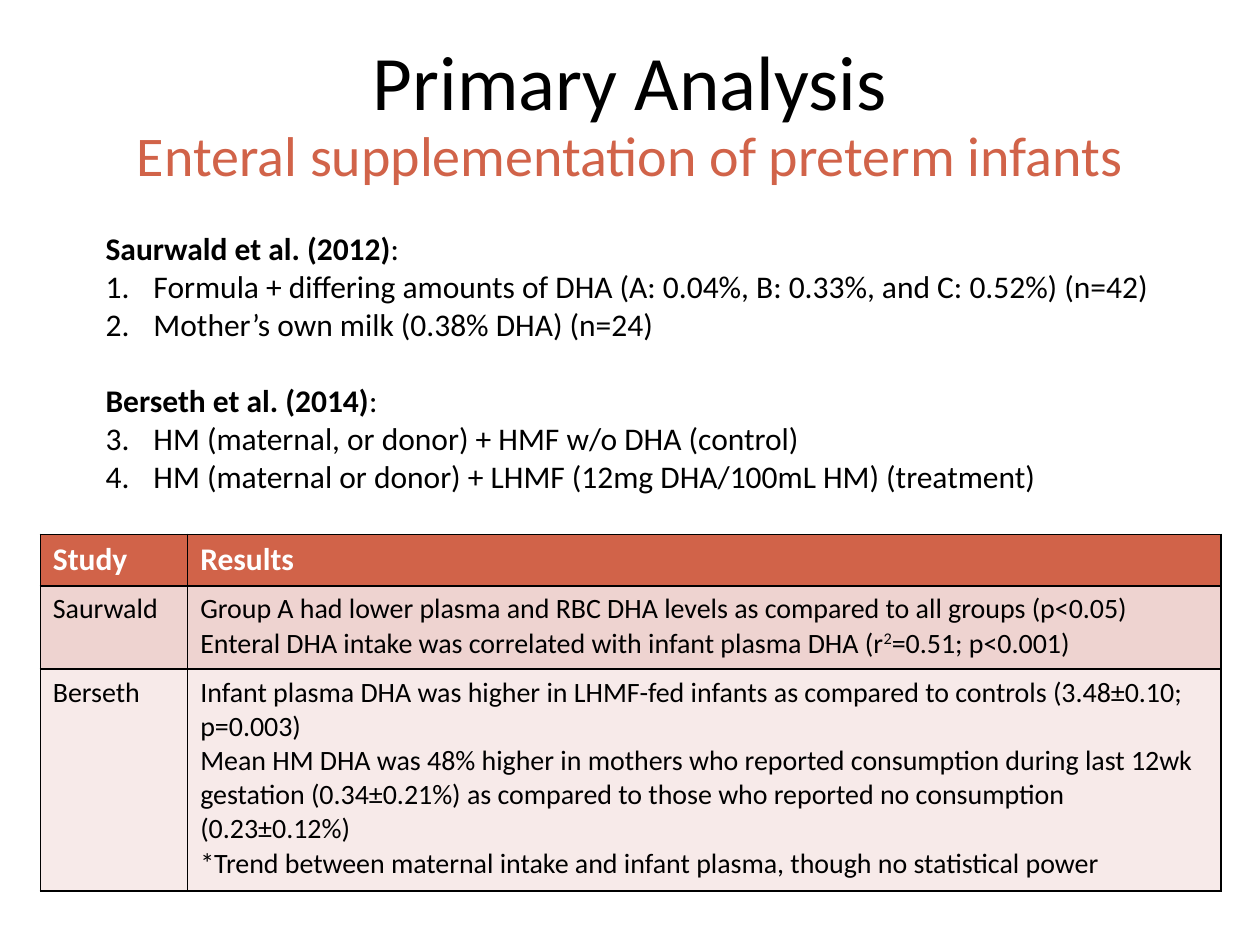
from lxml import etree
from pptx import Presentation
from pptx.dml.color import RGBColor
from pptx.enum.text import MSO_ANCHOR, MSO_AUTO_SIZE, PP_ALIGN
from pptx.oxml.ns import qn
from pptx.util import Inches, Pt

CENTER = PP_ALIGN.CENTER
MIDDLE = MSO_ANCHOR.MIDDLE
NO_AUTOFIT = MSO_AUTO_SIZE.NONE
GROW = MSO_AUTO_SIZE.SHAPE_TO_FIT_TEXT

FONT = "Calibri"
BLACK, WHITE, ACCENT = "000000", "FFFFFF", "D16349"
ROW_FILLS = [ACCENT, "EED3D0", "F7EAE9"]
COLUMN_WIDTHS = [1.17, 8.2]
ROW_HEIGHTS = [0.41, 0.66, 1.76]
LINE_HEIGHT = Pt(22)

STUDIES = [
    ("Saurwald et al. (2012)", [
        "Formula + differing amounts of DHA (A: 0.04%, B: 0.33%, and C: 0.52%) (n=42)",
        "Mother’s own milk (0.38% DHA) (n=24)",
    ]),
    ("Berseth et al. (2014)", [
        "HM (maternal, or donor) + HMF w/o DHA (control)",
        "HM (maternal or donor) + LHMF (12mg DHA/100mL HM) (treatment)",
    ]),
]

# Each cell is a list of paragraphs; a caret pair encloses superscript text.
RESULTS = [
    (["Study"], ["Results"]),
    (["Saurwald"], [
        "Group A had lower plasma and RBC DHA levels as compared to all groups (p<0.05)",
        "Enteral DHA intake was correlated with infant plasma DHA (r^2^=0.51; p<0.001)",
    ]),
    (["Berseth"], [
        "Infant plasma DHA was higher in LHMF-fed infants as compared to controls "
        "(3.48±0.10; p=0.003)",
        "Mean HM DHA was 48% higher in mothers who reported consumption during last 12wk "
        "gestation (0.34±0.21%) as compared to those who reported no consumption (0.23±0.12%)",
        "*Trend between maternal intake and infant plasma, though no statistical power",
    ]),
]


def color(value):
    return RGBColor.from_string(value)


def place(shape, box):
    for name, value in zip(("left", "top", "width", "height"), box):
        setattr(shape, name, Inches(value))


def add_run(paragraph, text, size, fill=BLACK, bold=False):
    run = paragraph.add_run()
    run.text = text
    for name, value in {"name": FONT, "size": Pt(size), "bold": bold}.items():
        setattr(run.font, name, value)
    run.font.color.rgb = color(fill)
    return run


def next_paragraph(text_frame, is_first):
    return text_frame.paragraphs[0] if is_first else text_frame.add_paragraph()


def fill_heading(placeholder, box, text, size, fill, anchor=None):
    place(placeholder, box)
    text_frame = placeholder.text_frame
    text_frame.auto_size = NO_AUTOFIT
    if anchor is not None:
        text_frame.vertical_anchor = anchor
    paragraph = text_frame.paragraphs[0]
    paragraph.alignment = CENTER
    add_run(paragraph, text, size, fill)
    return paragraph


def remove_bullet(paragraph):
    properties = paragraph._p.get_or_add_pPr()
    properties.set("marL", "0")
    properties.set("indent", "0")
    etree.SubElement(properties, qn("a:buNone"))


def number_paragraph(paragraph, start):
    properties = paragraph._p.get_or_add_pPr()
    properties.set("marL", str(Inches(0.38)))
    properties.set("indent", str(Inches(-0.38)))
    etree.SubElement(properties, qn("a:buFont"), typeface="+mj-lt")
    etree.SubElement(properties, qn("a:buAutoNum"), type="arabicPeriod", startAt=str(start))


def add_studies(slide, box):
    """Study names, each followed by its groups, numbered through."""
    text_box = slide.shapes.add_textbox(*map(Inches, box))
    text_frame = text_box.text_frame
    text_frame.word_wrap = True
    text_frame.auto_size = GROW
    start = 1
    for index, (study, groups) in enumerate(STUDIES):
        paragraph = next_paragraph(text_frame, index == 0)
        if index:
            paragraph.space_before = LINE_HEIGHT
        add_run(paragraph, study, 18, bold=True)
        add_run(paragraph, ":", 18)
        for group in groups:
            paragraph = text_frame.add_paragraph()
            number_paragraph(paragraph, start)
            add_run(paragraph, group, 18)
        start += len(groups)


def set_borders(cell):
    properties = cell._tc.get_or_add_tcPr()
    for position, side in enumerate(("a:lnL", "a:lnR", "a:lnT", "a:lnB")):
        line = etree.Element(qn(side), w=str(Pt(1)))
        fill = etree.SubElement(line, qn("a:solidFill"))
        etree.SubElement(fill, qn("a:srgbClr"), val=BLACK)
        properties.insert(position, line)


def fill_cell(cell, lines, fill, is_header):
    cell.fill.solid()
    cell.fill.fore_color.rgb = color(fill)
    set_borders(cell)
    size, text_color = (18, WHITE) if is_header else (16, BLACK)
    for index, line in enumerate(lines):
        paragraph = next_paragraph(cell.text_frame, index == 0)
        for part, text in enumerate(line.split("^")):
            run = add_run(paragraph, text, size, text_color, is_header)
            if part % 2:
                run._r.get_or_add_rPr().set("baseline", "30000")


def add_results(slide, box):
    frame = slide.shapes.add_table(len(RESULTS), len(COLUMN_WIDTHS), *map(Inches, box))
    table = frame.table
    for column, width in zip(table.columns, COLUMN_WIDTHS):
        column.width = Inches(width)
    for row, height in zip(table.rows, ROW_HEIGHTS):
        row.height = Inches(height)
    for row_index, row_cells in enumerate(RESULTS):
        for column_index, lines in enumerate(row_cells):
            cell = table.cell(row_index, column_index)
            fill_cell(cell, lines, ROW_FILLS[row_index], row_index == 0)


def main():
    presentation = Presentation()
    presentation.slide_width = Inches(10)
    presentation.slide_height = Inches(7.5)
    slide = presentation.slides.add_slide(presentation.slide_layouts[1])
    fill_heading(slide.shapes.title, (0.5, 0.22, 9, 0.82), "Primary Analysis",
                 44, BLACK, MIDDLE)
    subtitle = fill_heading(slide.placeholders[1], (0.5, 0.91, 9, 0.64),
                            "Enteral supplementation of preterm infants", 32, ACCENT)
    remove_bullet(subtitle)
    add_results(slide, (0.32, 4.24, sum(COLUMN_WIDTHS), sum(ROW_HEIGHTS)))
    add_studies(slide, (0.74, 1.77, 8.76, 2.22))
    presentation.save("out.pptx")


if __name__ == "__main__":
    main()
